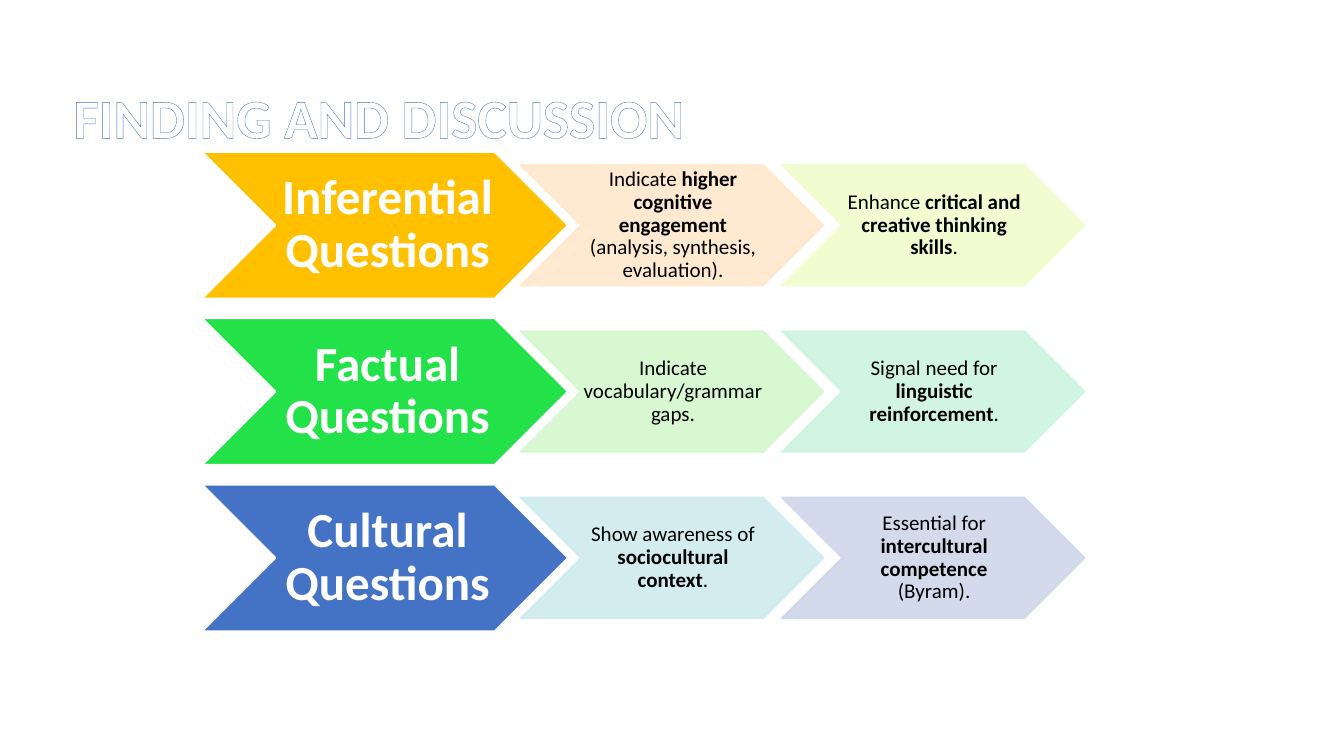
"""Build the Finding and Discussion slide: three question types, each leading to two findings."""
from lxml import etree
from pptx import Presentation
from pptx.dml.color import RGBColor
from pptx.enum.shapes import MSO_SHAPE
from pptx.enum.text import MSO_ANCHOR, PP_ALIGN
from pptx.oxml.ns import qn
from pptx.util import Inches, Pt

CHEVRON = MSO_SHAPE.CHEVRON
MIDDLE = MSO_ANCHOR.MIDDLE
CENTER, LEFT = PP_ALIGN.CENTER, PP_ALIGN.LEFT

HEADING = "FINDING AND DISCUSSION"
FINDINGS = [
    ("Inferential Questions", "FFC000", [
        (("Indicate ", "higher cognitive engagement", " (analysis, synthesis, evaluation)."), "FFE8CC"),
        (("Enhance ", "critical and creative thinking skills", "."), "F2FCCC"),
    ]),
    ("Factual Questions", "23E148", [
        (("Indicate vocabulary/grammar gaps.",), "D3F8CC"),
        (("Signal need for ", "linguistic reinforcement", "."), "CDF4DF"),
    ]),
    ("Cultural Questions", "4472C4", [
        (("Show awareness of ", "sociocultural context", "."), "CEEBEF"),
        (("Essential for ", "intercultural competence", " (Byram)."), "CFD6EA"),
    ]),
]

THEME = {
    "font": "Calibri", "white": "FFFFFF", "black": "000000", "outline": "4472C4",
    "heading_size": 39.6, "question_size": 35, "finding_size": 15,
    "line_spacing": 0.9, "finding_alpha": 90,
}
SLIDE_SIZE = (13.33, 7.5)
HEADING_BOX = (0.63, 0.88, 11.5, 0.63)
GRID_LEFT, GRID_TOP, ROW_PITCH = 2.01, 1.51, 1.65
QUESTION_SIZE, FINDING_SIZE = (3.62, 1.45), (3.01, 1.2)
FINDING_LEFT, FINDING_PITCH = 5.16, 2.59
QUESTION_INSETS, FINDING_INSETS = (0.05, 0.02, 0, 0.02), (0.02, 0.01, 0, 0.01)


def set_all(target, values):
    for name, value in values.items():
        setattr(target, name, value)


def write(frame, pieces, size, color, insets, align=CENTER, first_bold=False):
    """Fill a frame with runs that alternate between regular and bold."""
    left, top, right, bottom = map(Inches, insets)
    set_all(frame, {"word_wrap": True, "vertical_anchor": MIDDLE, "margin_left": left,
                    "margin_top": top, "margin_right": right, "margin_bottom": bottom})
    paragraph = frame.paragraphs[0]
    set_all(paragraph, {"alignment": align, "line_spacing": THEME["line_spacing"]})
    for index, piece in enumerate(pieces):
        run = paragraph.add_run()
        run.text = piece
        set_all(run.font, {"name": THEME["font"], "size": Pt(size),
                           "bold": first_bold != (index % 2 == 1)})
        run.font.color.rgb = RGBColor.from_string(color)
    return paragraph


def add_heading(slide):
    box = slide.shapes.add_textbox(*map(Inches, HEADING_BOX))
    paragraph = write(box.text_frame, [HEADING], THEME["heading_size"], THEME["white"],
                      (0.1, 0.05, 0.1, 0.05), LEFT, True)
    outline = etree.Element(qn("a:ln"), w=str(Pt(0.8)))
    solid = etree.SubElement(outline, qn("a:solidFill"))
    etree.SubElement(solid, qn("a:srgbClr"), val=THEME["outline"])
    paragraph.runs[0].font._element.insert(0, outline)


def add_chevron(slide, left, top, size, fill, line, alpha=100):
    chevron = slide.shapes.add_shape(CHEVRON, *map(Inches, (left, top, *size)))
    chevron.shadow.inherit = False
    chevron.fill.solid()
    chevron.fill.fore_color.rgb = RGBColor.from_string(fill)
    chevron.line.color.rgb = RGBColor.from_string(line)
    chevron.line.width = Pt(1)
    if alpha < 100:
        for color in chevron._element.spPr.iter(qn("a:srgbClr")):
            etree.SubElement(color, qn("a:alpha"), val=str(alpha * 1000))
    return chevron.text_frame


def main():
    deck = Presentation()
    deck.slide_width, deck.slide_height = map(Inches, SLIDE_SIZE)
    slide = deck.slides.add_slide(deck.slide_layouts[6])
    add_heading(slide)
    for row, (question, fill, findings) in enumerate(FINDINGS):
        top = GRID_TOP + row * ROW_PITCH
        frame = add_chevron(slide, GRID_LEFT, top, QUESTION_SIZE, fill, THEME["white"])
        write(frame, [question], THEME["question_size"], THEME["white"],
              QUESTION_INSETS, first_bold=True)
        finding_top = top + (QUESTION_SIZE[1] - FINDING_SIZE[1]) / 2
        for column, (pieces, tint) in enumerate(findings):
            frame = add_chevron(slide, FINDING_LEFT + column * FINDING_PITCH, finding_top,
                                FINDING_SIZE, tint, tint, THEME["finding_alpha"])
            write(frame, pieces, THEME["finding_size"], THEME["black"], FINDING_INSETS)
    deck.save("out.pptx")


if __name__ == "__main__":
    main()
